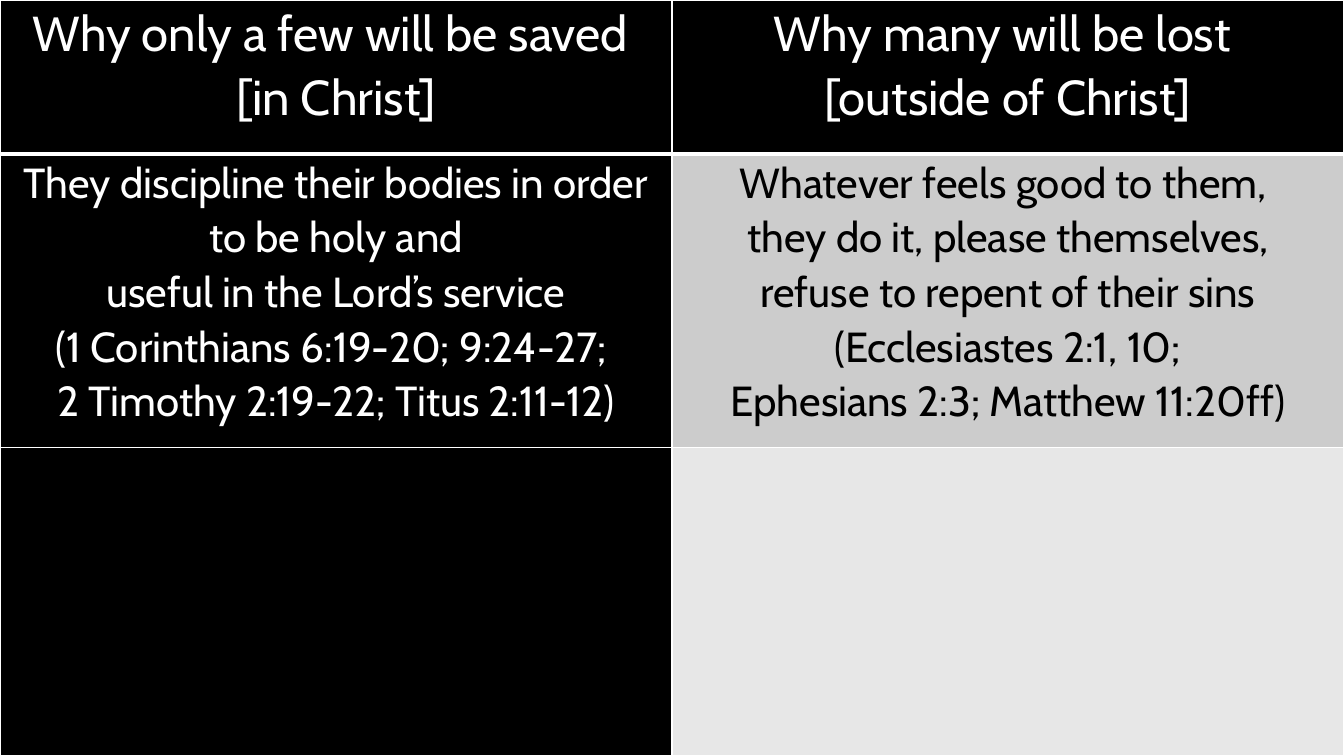
from lxml import etree
from pptx import Presentation, util as u
from pptx.dml.color import RGBColor
from pptx.enum import text
from pptx.oxml.ns import qn

COLORS = {"black": "000000", "white": "FFFFFF", "gray": "CCCCCC", "pale": "E7E7E7"}
FONT = "Cabin"
ROW_SHARES = [0.204, 0.388, 0.408]

HEADINGS = [
    ["Why only a few will be saved ", "[in Christ]"],
    ["Why many will be lost ", "[outside of Christ]"],
]
REASONS = [
    ["They discipline their bodies in order to be holy and",
     "useful in the Lord’s service",
     "(1 Corinthians 6:19-20; 9:24-27; ",
     "2 Timothy 2:19-22; Titus 2:11-12)"],
    ["Whatever feels good to them, ",
     "they do it, please themselves,",
     "refuse to repent of their sins",
     "(Ecclesiastes 2:1, 10;",
     "Ephesians 2:3; Matthew 11:20ff)"],
]
# Each row: lines per column, text size, text colours, fills
ROWS = [
    (HEADINGS, 35, ["white", "white"], ["black", "black"]),
    (REASONS, 30, ["white", "black"], ["black", "gray"]),
    ([[], []], 30, ["white", "black"], ["black", "pale"]),
]


def write_lines(frame, lines, size, color):
    for index, line in enumerate(lines):
        paragraph = frame.paragraphs[0] if index == 0 else frame.add_paragraph()
        paragraph.alignment = text.PP_ALIGN.CENTER
        paragraph.line_spacing = 1.07
        run = paragraph.add_run()
        run.text = line
        run.font.name = FONT
        run.font.size = u.Pt(size)
        run.font.bold = False
        run.font.color.rgb = RGBColor.from_string(COLORS[color])


def draw_borders(cell, **widths):
    """Give the cell white borders; widths maps the sides L, R, T, B to points."""
    properties = cell._tc.get_or_add_tcPr()
    for side, width in widths.items():
        line = etree.SubElement(properties, qn(f"a:ln{side}"), w=str(u.Pt(width)))
        fill = etree.SubElement(line, qn("a:solidFill"))
        etree.SubElement(fill, qn("a:srgbClr"), val=COLORS["white"])


deck = Presentation()
deck.slide_width, deck.slide_height = u.Inches(13.33), u.Inches(7.5)
slide = deck.slides.add_slide(deck.slide_layouts[6])
slide.background.fill.solid()
slide.background.fill.fore_color.rgb = RGBColor.from_string(COLORS["black"])

comparison = slide.shapes.add_table(
    len(ROWS), 2, 0, 0, deck.slide_width, deck.slide_height).table
comparison.horz_banding = False
for row, share in zip(comparison.rows, ROW_SHARES):
    row.height = int(deck.slide_height * share)

for r, (columns, size, text_colors, fills) in enumerate(ROWS):
    for c, lines in enumerate(columns):
        cell = comparison.cell(r, c)
        cell.margin_left = cell.margin_right = u.Inches(0.07)
        cell.margin_top = cell.margin_bottom = 0
        draw_borders(cell, L=1, R=1, T=3 if r == 1 else 1, B=3 if r == 0 else 1)
        cell.fill.solid()
        cell.fill.fore_color.rgb = RGBColor.from_string(COLORS[fills[c]])
        write_lines(cell.text_frame, lines, size, text_colors[c])

deck.save("out.pptx")
